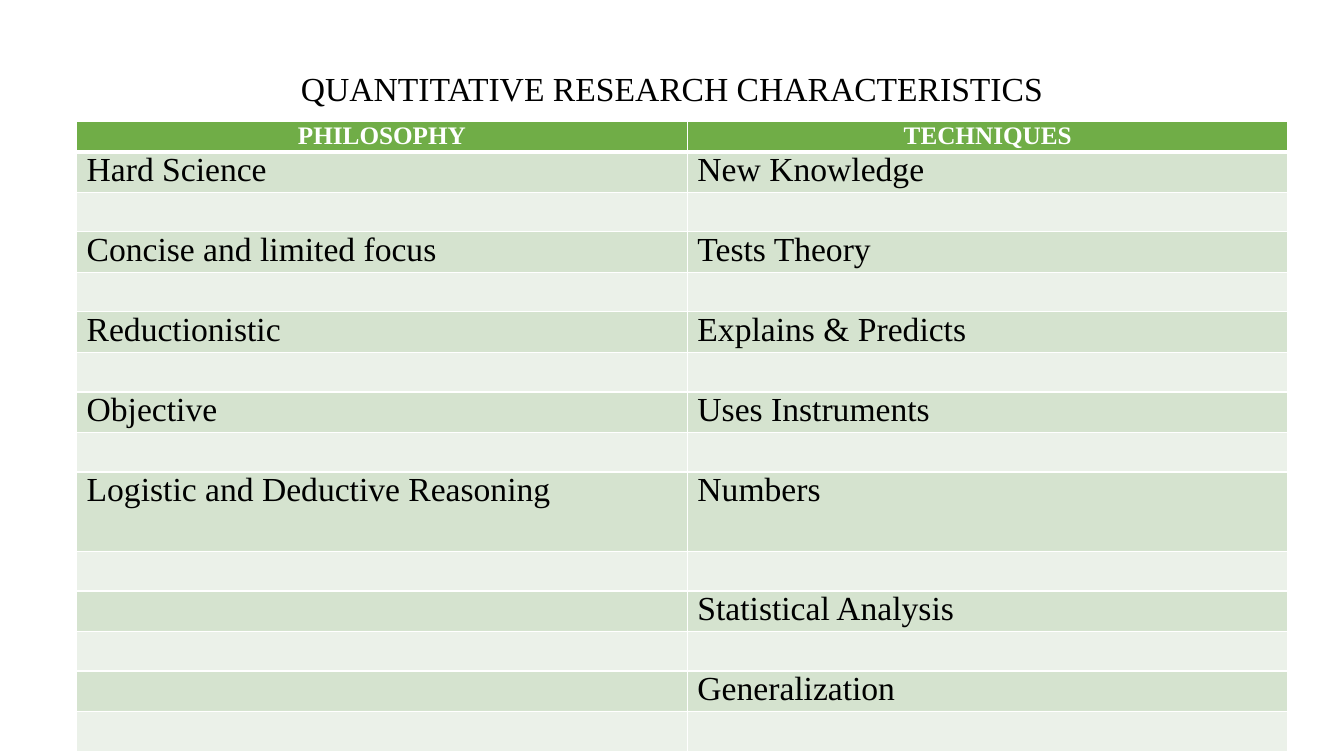
from lxml.etree import SubElement
from pptx import Presentation
from pptx.dml.color import RGBColor
from pptx.enum.text import MSO_ANCHOR, PP_ALIGN
from pptx.oxml.ns import qn
from pptx.util import Pt

THEME = {
    "font": "Times New Roman",
    "text": "000000",
    "white": "FFFFFF",
    "header": "70AD47",
    "bands": ["D5E3CF", "EBF1E9"],
    "body_size": 24,
    "header_size": 18,
}
HEADERS = ["PHILOSOPHY", "TECHNIQUES"]
TRAITS = [
    ["Hard Science", "New Knowledge"],
    ["Concise and limited focus", "Tests Theory"],
    ["Reductionistic", "Explains & Predicts"],
    ["Objective", "Uses Instruments"],
    ["Logistic and Deductive Reasoning", "Numbers"],
    ["", "Statistical Analysis"],
    ["", "Generalization"],
]
ROW_HEIGHT = 28.35
HEADER_HEIGHT = 21.6
COLUMN_WIDTHS = [436.3, 429.1]


def add_run(p, text, size, color, bold=False):
    r = p.add_run()
    r.text = text
    r.font.name = THEME["font"]
    r.font.size = Pt(size)
    r.font.bold = bold
    r.font.color.rgb = RGBColor.from_string(color)


def add_border(cell, side, width):
    ln = SubElement(cell._tc.get_or_add_tcPr(), qn(f"a:ln{side}"), w=str(Pt(width)))
    fill = SubElement(ln, qn("a:solidFill"))
    SubElement(fill, qn("a:srgbClr"), val=THEME["white"])


prs = Presentation()
prs.slide_width = Pt(960)
prs.slide_height = Pt(540)
s = prs.slides.add_slide(prs.slide_layouts[6])

title = s.shapes.add_textbox(Pt(66), Pt(28.8), Pt(828), Pt(72))
tf = title.text_frame
tf.word_wrap = True
tf.vertical_anchor = MSO_ANCHOR.MIDDLE
p = tf.paragraphs[0]
p.alignment = PP_ALIGN.CENTER
p.line_spacing = 0.9
add_run(p, "QUANTITATIVE RESEARCH CHARACTERISTICS", THEME["body_size"], THEME["text"])

rows = [HEADERS]
for traits in TRAITS:
    rows += [traits, ["", ""]]
heights = [HEADER_HEIGHT] + [ROW_HEIGHT] * (len(rows) - 1)
heights[rows.index(TRAITS[4])] = 2 * ROW_HEIGHT

table = s.shapes.add_table(
    len(rows), len(HEADERS), Pt(54.7), Pt(86.8), Pt(sum(COLUMN_WIDTHS)), Pt(sum(heights))
).table
for column, width in zip(table.columns, COLUMN_WIDTHS):
    column.width = Pt(width)

for i, texts in enumerate(rows):
    table.rows[i].height = Pt(heights[i])
    is_header = i == 0
    for j, text in enumerate(texts):
        cell = table.cell(i, j)
        cell.margin_left = cell.margin_right = Pt(7.2)
        cell.margin_top = cell.margin_bottom = Pt(0)
        for side in "LRTB":
            under_header = (i, side) in [(0, "B"), (1, "T")]
            add_border(cell, side, 3 if under_header else 1)
        cell.fill.solid()
        color = THEME["header"] if is_header else THEME["bands"][(i - 1) % 2]
        cell.fill.fore_color.rgb = RGBColor.from_string(color)
        p = cell.text_frame.paragraphs[0]
        if is_header:
            p.alignment = PP_ALIGN.CENTER
            add_run(p, text, THEME["header_size"], THEME["white"], True)
        elif text:
            add_run(p, text, THEME["body_size"], THEME["text"])

prs.save("out.pptx")
